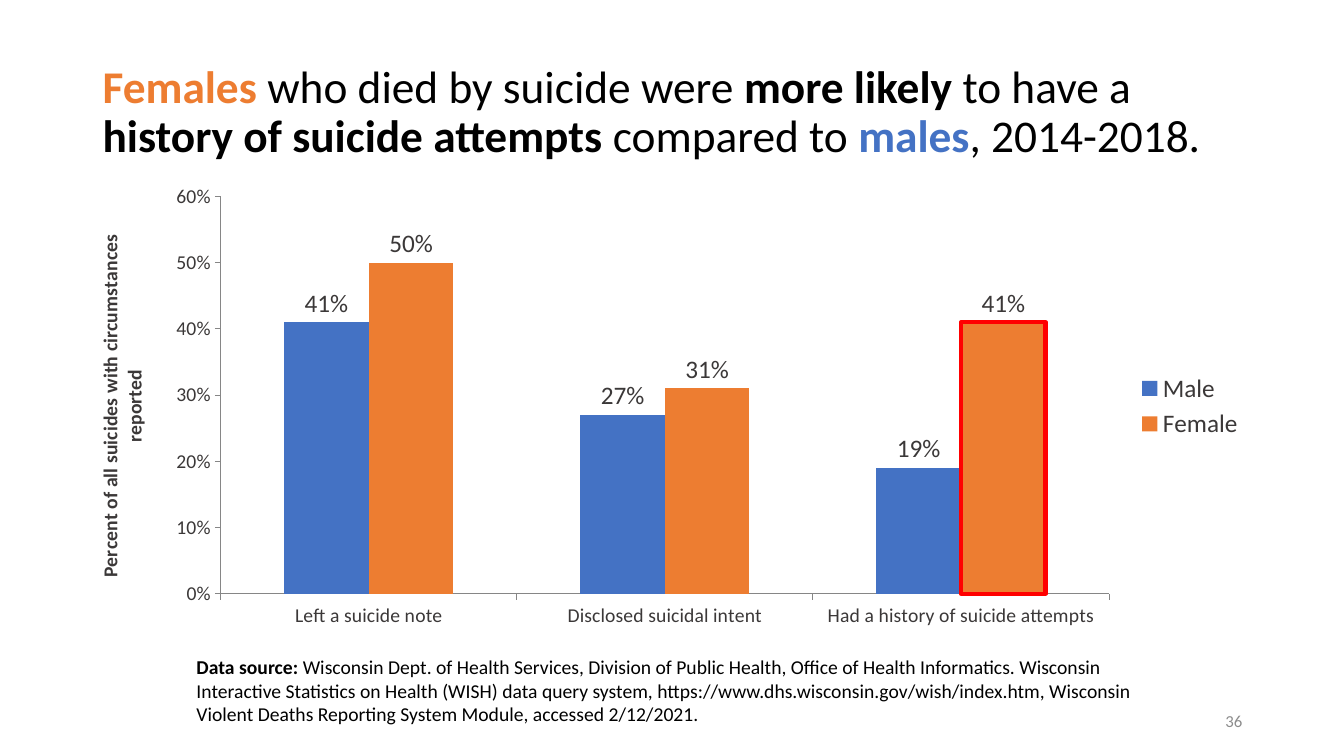
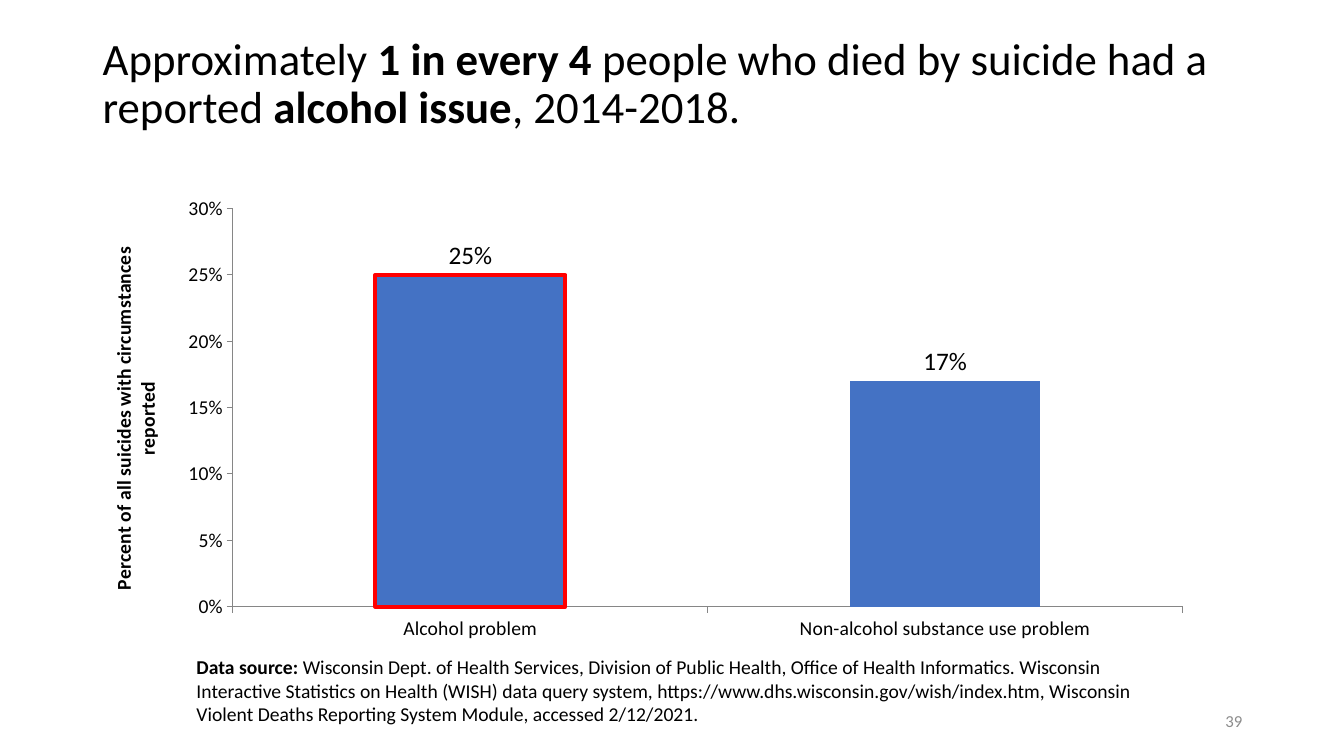
from dataclasses import dataclass

from lxml.etree import SubElement
from pptx import Presentation
from pptx.chart.data import CategoryChartData
from pptx.dml.color import RGBColor
from pptx.enum.chart import XL_CHART_TYPE as ChartType
from pptx.enum.chart import XL_LABEL_POSITION as LabelPos
from pptx.enum.chart import XL_LEGEND_POSITION as LegendPos
from pptx.enum.chart import XL_TICK_MARK as Tick
from pptx.enum.text import MSO_ANCHOR as Anchor
from pptx.enum.text import PP_ALIGN as Align
from pptx.oxml.ns import qn
from pptx.util import Inches, Pt


@dataclass(frozen=True)
class Theme:
    font: str = "Calibri"
    black: str = "000000"
    dark: str = "3B3838"
    grey: str = "8C8C8C"
    axis: str = "868686"
    male: str = "4472C4"
    female: str = "ED7D31"
    highlight: str = "FF0000"
    title_size: float = 32
    label_size: float = 18
    small_size: float = 14
    number_size: float = 12
    highlight_width: float = 3


AXIS_TITLE = "Percent of all suicides with circumstances reported"
SOURCE = (
    "Wisconsin Dept. of Health Services, Division of Public Health, "
    "Office of Health Informatics. Wisconsin Interactive Statistics on Health "
    "(WISH) data query system, https://www.dhs.wisconsin.gov/wish/index.htm, "
    "Wisconsin Violent Deaths Reporting System Module, accessed 2/12/2021."
)


class Deck:
    def __init__(self, theme):
        self.t = theme
        self.prs = Presentation()
        self.prs.slide_width = Inches(13.33)
        self.prs.slide_height = Inches(7.5)
        self.s = None

    def style(self, font, size, color, bold=None):
        font.name = self.t.font
        font.size = Pt(size)
        font.color.rgb = RGBColor.from_string(color)
        font.bold = bold

    def text(self, box, runs, size, color, anchor=Anchor.TOP, align=Align.LEFT,
             spacing=None):
        tf = self.s.shapes.add_textbox(*map(Inches, box)).text_frame
        tf.word_wrap = True
        tf.vertical_anchor = anchor
        p = tf.paragraphs[0]
        p.alignment = align
        p.line_spacing = spacing
        self.style(p.font, size, color)
        for content, bold, run_color in runs:
            r = p.add_run()
            r.text = content
            if bold:
                r.font.bold = True
            if run_color:
                r.font.color.rgb = RGBColor.from_string(run_color)

    def slide(self, number, title, title_top, title_size):
        t = self.t
        self.s = self.prs.slides.add_slide(self.prs.slide_layouts[6])
        self.text((0.92, title_top, 11.5, 1.45), title, title_size, t.black,
                  Anchor.MIDDLE, spacing=0.9)
        self.text((1.85, 6.45, 9.62, 1.11),
                  [("Data source: ", True, None), (SOURCE, False, None)],
                  t.small_size, t.black)
        self.text((9.42, 6.95, 3, 0.4), [(str(number), False, None)],
                  t.number_size, t.grey, Anchor.MIDDLE, Align.RIGHT)

    def chart(self, box, plot_box, categories, series, top, step, color,
              highlight, legend=False):
        t = self.t
        data = CategoryChartData(number_format="0%")
        data.categories = categories
        for name, values, _ in series:
            data.add_series(name, values)
        chart = self.s.shapes.add_chart(
            ChartType.COLUMN_CLUSTERED, *map(Inches, box), data).chart
        self.style(chart.font, t.label_size, color)
        chart.has_title = False
        chart.has_legend = legend
        if legend:
            chart.legend.position = LegendPos.RIGHT
            chart.legend.include_in_layout = False
        self.place_plot(chart, box, plot_box)
        self.axes(chart, top, step, color)

        plot = chart.plots[0]
        plot.gap_width = 150
        plot.overlap = 0
        plot.vary_by_categories = False
        for ser, (_, _, fill) in zip(plot.series, series):
            ser.format.fill.solid()
            ser.format.fill.fore_color.rgb = RGBColor.from_string(fill)
            labels = ser.data_labels
            labels.show_value = True
            labels.position = LabelPos.OUTSIDE_END
            labels.number_format = "0%"
            labels.number_format_is_linked = False
            self.style(labels.font, t.label_size, color)

        index, point = highlight
        fmt = plot.series[index].points[point].format
        fmt.fill.solid()
        fmt.fill.fore_color.rgb = RGBColor.from_string(series[index][2])
        fmt.line.color.rgb = RGBColor.from_string(t.highlight)
        fmt.line.width = Pt(t.highlight_width)

    def axes(self, chart, top, step, color):
        t = self.t
        for axis in (chart.category_axis, chart.value_axis):
            axis.has_major_gridlines = False
            axis.major_tick_mark = Tick.OUTSIDE
            axis.minor_tick_mark = Tick.NONE
            axis.format.line.color.rgb = RGBColor.from_string(t.axis)
            self.style(axis.tick_labels.font, t.small_size, color)
        axis = chart.value_axis
        axis.minimum_scale = 0
        axis.maximum_scale = top
        axis.major_unit = step
        axis.tick_labels.number_format = "0%"
        axis.tick_labels.number_format_is_linked = False
        tf = axis.axis_title.text_frame
        tf.text = AXIS_TITLE
        self.style(tf.paragraphs[0].font, t.small_size, color, True)

    def place_plot(self, chart, box, plot_box):
        area = chart._chartSpace.find(".//" + qn("c:plotArea"))
        for old in area.findall(qn("c:layout")):
            area.remove(old)
        layout = SubElement(area, qn("c:layout"))
        area.insert(0, layout)
        manual = SubElement(layout, qn("c:manualLayout"))
        left, top, width, height = box
        x, y, w, h = plot_box
        for tag, value in (
            ("layoutTarget", "inner"), ("xMode", "edge"), ("yMode", "edge"),
            ("x", (x - left) / width), ("y", (y - top) / height),
            ("w", w / width), ("h", h / height),
        ):
            SubElement(manual, qn("c:" + tag)).set("val", str(value))


def main():
    t = Theme()
    deck = Deck(t)

    deck.slide(36, [
        ("Females ", True, t.female),
        ("who died by suicide were ", False, None),
        ("more likely", True, None),
        (" to have a ", False, None),
        ("history of suicide attempts ", True, None),
        ("compared to ", False, None),
        ("males", True, t.male),
        (", 2014-2018.", False, None),
    ], 0.4, 32.4)
    deck.chart(
        (0.75, 1.74, 11.69, 4.58), (2.19, 1.95, 8.81, 3.94),
        ["Left a suicide note", "Disclosed suicidal intent",
         "Had a history of suicide attempts"],
        [("Male", (0.41, 0.27, 0.19), t.male),
         ("Female", (0.5, 0.31, 0.41), t.female)],
        0.6, 0.1, t.dark, highlight=(1, 2), legend=True)

    deck.slide(39, [
        ("Approximately ", False, None),
        ("1 in every 4 ", True, None),
        ("people who died by suicide had a reported ", False, None),
        ("alcohol issue", True, None),
        (", 2014-2018.", False, None),
    ], 0.12, t.title_size)
    deck.chart(
        (0.86, 1.85, 11.08, 4.59), (2.31, 2.07, 9.42, 3.95),
        ["Alcohol problem", "Non-alcohol substance use problem"],
        [("Series 1", (0.25, 0.17), t.male)],
        0.3, 0.05, t.black, highlight=(0, 0))

    deck.prs.save("out.pptx")


if __name__ == "__main__":
    main()
